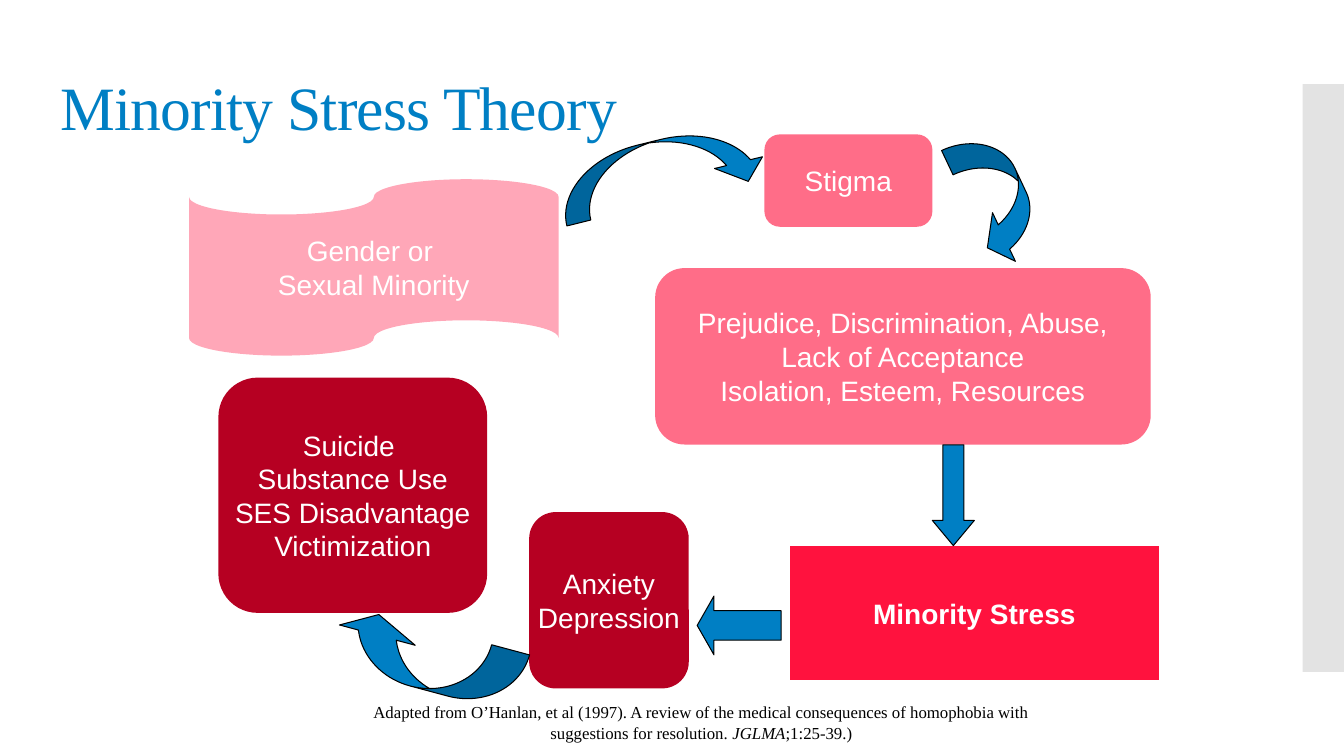
from lxml.etree import SubElement
from pptx import Presentation
from pptx.dml.color import RGBColor
from pptx.enum.shapes import MSO_SHAPE as Shape
from pptx.enum.text import MSO_ANCHOR as Anchor, PP_ALIGN as Align
from pptx.oxml.ns import qn
from pptx.util import Pt

BLUE, PINK, CRIMSON, WHITE, BLACK = "007FC4", "FF6D88", "B60022", "FFFFFF", "000000"
SANS, SERIF = "Arial", "Times New Roman"
ROUNDED = Shape.FLOWCHART_ALTERNATE_PROCESS

TITLE = "Minority Stress Theory"
CITATION = [
    ("Adapted from O’Hanlan, et al (1997). A review of the medical consequences "
     "of homophobia with suggestions for resolution. ", False),
    ("JGLMA", True),
    (";1:25‐39.)", False),
]

# kind, (left, top, width, height), fill, bold, lines
STAGES = [
    (ROUNDED, (468, 191.5, 354, 126), PINK, False,
     ["Prejudice, Discrimination, Abuse,", "Lack of Acceptance", "Isolation, Esteem, Resources"]),
    (ROUNDED, (546, 96, 120, 66), PINK, False, ["Stigma"]),
    (Shape.FLOWCHART_PUNCHED_TAPE, (135, 128, 264, 126), "FFA7B8", False,
     ["Gender or ", "Sexual Minority"]),
    (Shape.FLOWCHART_PREDEFINED_PROCESS, (564, 389.75, 264, 96), "FF123E", True,
     ["Minority Stress"]),
    (ROUNDED, (378, 365.75, 114, 126), CRIMSON, False, ["Anxiety", "Depression"]),
    (ROUNDED, (156, 269.75, 192, 168), CRIMSON, False,
     ["Suicide ", "Substance Use", "SES Disadvantage", "Victimization"]),
]

# kind, (left, top, width, height), rotation, adjustments
ARROWS = [
    (Shape.CURVED_DOWN_ARROW, (397.5, 100, 151, 44), 346.2, (0.4, 0.8, 0.333)),
    (Shape.CURVED_DOWN_ARROW, (664, 121, 96, 42), 64.8, (0.457, 0.914, 0.333)),
    (Shape.DOWN_ARROW, (666, 317.75, 30, 72), 0, (0.5, 0.6)),
    (Shape.LEFT_ARROW, (498, 425.75, 60, 42), 0, (0.5, 0.286)),
    (Shape.CURVED_LEFT_ARROW, (283.5, 401, 43.5, 139.5), 105, (0.644, 1.288, 0.333)),
]


def rgb(color):
    return RGBColor.from_string(color)


def set_font(paragraph, name, size, color, bold=False):
    font = paragraph.font
    font.name, font.size, font.bold = name, Pt(size), bold
    font.color.rgb = rgb(color)


def add_shape(slide, kind, box, fill):
    shape = slide.shapes.add_shape(kind, *map(Pt, box))
    shape.shadow.inherit = False
    shape.fill.solid()
    shape.fill.fore_color.rgb = rgb(fill)
    shape.line.fill.background()
    return shape


def add_side_band(slide):
    band = add_shape(slide, Shape.RECTANGLE, (930.5, 60, 29.5, 420), "C8C8C8")
    color = band.fill._xPr.find(qn("a:solidFill"))[0]
    SubElement(color, qn("a:alpha"), val="50000")


def add_stage(slide, kind, box, fill, bold, lines):
    frame = add_shape(slide, kind, box, fill).text_frame
    frame.word_wrap = False
    frame.vertical_anchor = Anchor.MIDDLE
    for index, line in enumerate(lines):
        paragraph = frame.add_paragraph() if index else frame.paragraphs[0]
        paragraph.text = line
        paragraph.alignment = Align.CENTER
        set_font(paragraph, SANS, 20, WHITE, bold)


def add_arrow(slide, kind, box, rotation, adjustments):
    arrow = add_shape(slide, kind, box, BLUE)
    arrow.rotation = rotation
    arrow.line.color.rgb = rgb(BLACK)
    arrow.line.width = Pt(0.75)
    for index, value in enumerate(adjustments):
        arrow.adjustments[index] = value


def add_text_frame(slide, box):
    frame = slide.shapes.add_textbox(*map(Pt, box)).text_frame
    frame.word_wrap = True
    return frame


def add_title(slide):
    frame = add_text_frame(slide, (36, 39.5, 492, 79))
    frame.vertical_anchor = Anchor.MIDDLE
    paragraph = frame.paragraphs[0]
    paragraph.line_spacing = 0.9
    run = paragraph.add_run()
    run.text = TITLE
    set_font(paragraph, SERIF, 44, BLUE)
    run.font._element.set("spc", "-60")


def add_citation(slide):
    paragraph = add_text_frame(slide, (252, 498, 498, 36)).paragraphs[0]
    paragraph.alignment = Align.CENTER
    set_font(paragraph, SERIF, 12, BLACK)
    for text, italic in CITATION:
        run = paragraph.add_run()
        run.text = text
        run.font.italic = italic


def main():
    presentation = Presentation()
    presentation.slide_width, presentation.slide_height = Pt(960), Pt(540)
    slide = presentation.slides.add_slide(presentation.slide_layouts[6])
    add_side_band(slide)
    for stage in STAGES:
        add_stage(slide, *stage)
    for arrow in ARROWS:
        add_arrow(slide, *arrow)
    add_title(slide)
    add_citation(slide)
    presentation.save("out.pptx")


if __name__ == "__main__":
    main()
